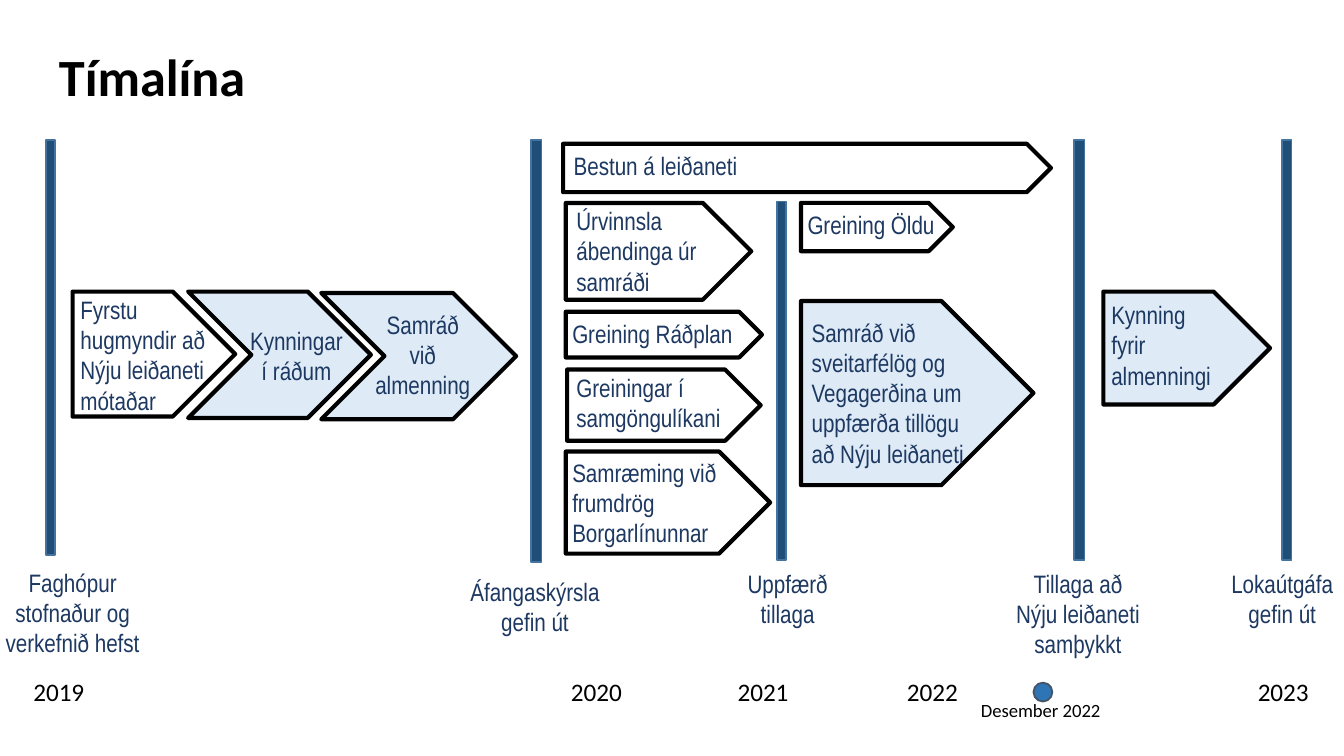
from pptx import Presentation
from pptx.dml.color import RGBColor
from pptx.enum.shapes import MSO_SHAPE as Shape
from pptx.enum.text import PP_ALIGN as Align
from pptx.util import Inches, Pt

NAVY, PALE, BLACK = "1D3861", "DEEBF7", "000000"
PLATE, CHEVRON = Shape.PENTAGON, Shape.CHEVRON
LEFT, MID = Align.LEFT, Align.CENTER
BAR_TOP = 1.04

STAGES = [
    (CHEVRON, (2.39, 2.18, 1.45, 0.94), PALE, "Samráð við almenning", (0.28, 0.07, 0.95, 0.78), MID),
    (CHEVRON, (1.4, 2.17, 1.36, 0.94), PALE, "Kynningar í ráðum", (0.33, 0.2, 0.95, 0.56), MID),
    (PLATE, (0.54, 2.17, 1.21, 0.93), None, "Fyrstu hugmyndir að Nýju leiðaneti mótaðar", (-0.04, -0.03, 1.28, 1.01), LEFT),
    (PLATE, (4.19, 1.07, 3.63, 0.36), None, "Bestun á leiðaneti", (-0.02, 0, 2.14, 0.33), LEFT),
    (PLATE, (4.21, 1.51, 1.38, 0.72), None, "Úrvinnsla ábendinga úr samráði", (-0.02, -0.03, 1.19, 0.78), LEFT),
    (PLATE, (4.21, 2.32, 1.46, 0.34), None, "Greining Ráðplan", (-0.05, 0, 1.44, 0.33), LEFT),
    (PLATE, (4.22, 2.75, 1.44, 0.53), None, "Greiningar í samgöngulíkani", (-0.03, -0.03, 1.64, 0.56), LEFT),
    (PLATE, (4.21, 3.36, 1.52, 0.76), None, "Samræming við frumdrög Borgarlínunnar", (-0.05, -0.01, 1.34, 0.78), LEFT),
    (PLATE, (5.96, 1.51, 1.13, 0.36), None, "Greining Öldu", (-0.05, 0, 1.18, 0.33), LEFT),
    (PLATE, (5.96, 2.24, 1.73, 1.37), PALE, "Samráð við sveitarfélög og Vegagerðina um uppfærða tillögu að Nýju leiðaneti", (-0.02, 0.07, 1.49, 1.24), LEFT),
    (PLATE, (8.21, 2.17, 1.24, 0.84), PALE, "Kynning fyrir almenningi", (-0.04, 0.01, 0.99, 0.78), LEFT),
]

MARKS = [
    ((0.34, BAR_TOP, 0.07, 3.09), "Faghópur stofnaður og verkefnið hefst", (-0.44, 3.13, 1.28, 0.78)),
    ((3.95, BAR_TOP, 0.08, 3.14), "Áfangaskýrsla gefin út", (-0.56, 3.2, 1.18, 0.56)),
    ((5.78, 1.5, 0.07, 2.67), "Uppfærð tillaga", (-0.51, 2.68, 1.18, 0.56)),
    ((7.99, BAR_TOP, 0.08, 3.13), "Tillaga að Nýju leiðaneti samþykkt", (-0.56, 3.14, 1.18, 0.78)),
    ((9.54, BAR_TOP, 0.07, 3.13), "Lokaútgáfa gefin út", (-0.54, 3.14, 1.08, 0.56)),
]

YEARS = [("2019", 0.09), ("2020", 4.09), ("2021", 5.33), ("2022", 6.59), ("2023", 9.2)]


def color(code):
    """Turn a hex string into a colour."""
    return RGBColor.from_string(code)


def shift(box, part):
    """Place a part relative to the corner of a box."""
    return box[0] + part[0], box[1] + part[1], part[2], part[3]


def add_shape(slide, kind, box, fill, line, width):
    """Draw an outlined shape, hollow when it has no fill."""
    shape = slide.shapes.add_shape(kind, *map(Inches, box))
    shape.shadow.inherit = False
    if fill:
        shape.fill.solid()
        shape.fill.fore_color.rgb = color(fill)
    else:
        shape.fill.background()
    shape.line.color.rgb = color(line)
    shape.line.width = Pt(width)


def add_text(slide, box, text, size=13.5, face="Arial Narrow", tint=NAVY, align=LEFT, bold=False):
    """Write one wrapped paragraph."""
    frame = slide.shapes.add_textbox(*map(Inches, box)).text_frame
    frame.word_wrap = True
    frame.text = text
    para = frame.paragraphs[0]
    para.alignment = align
    for run in para.runs:
        font = run.font
        font.size, font.name, font.bold = Pt(size), face, bold
        font.color.rgb = color(tint)


def add_stage(slide, kind, box, fill, text, part, align):
    """Draw one work stage as an arrow with its text."""
    add_shape(slide, kind, box, fill, BLACK, 2.25)
    add_text(slide, shift(box, part), text, align=align)


def add_mark(slide, box, text, part):
    """Draw one milestone bar with the label below it."""
    add_shape(slide, Shape.RECTANGLE, box, "1F4E79", "43739E", 1)
    add_text(slide, shift(box, part), text, align=MID)


def add_years(slide, box):
    """Write the year axis with the dated dot."""
    for year, left in YEARS:
        add_text(slide, shift(box, (left, 0, 0.65, box[3])), year, face="Calibri", tint=BLACK)
    add_shape(slide, Shape.OVAL, shift(box, (7.63, 0.1, 0.14, 0.14)), "2E75B6", "44546A", 1)
    add_text(slide, shift(box, (7.14, 0.17, 1.35, 0.27)), "Desember 2022", 10, "Calibri", BLACK)


def main():
    """Build the timeline slide."""
    deck = Presentation()
    deck.slide_width = Inches(10)
    deck.slide_height = deck.slide_width * 9 // 16
    slide = deck.slides.add_slide(deck.slide_layouts[6])
    add_text(slide, (0.34, 0.28, 5.95, 0.8), "Tímalína", 28, "Calibri", BLACK, bold=True)
    for stage in STAGES:
        add_stage(slide, *stage)
    for mark in MARKS:
        add_mark(slide, *mark)
    add_years(slide, (0.06, 4.98, 10.08, 0.33))
    deck.save("out.pptx")


if __name__ == "__main__":
    main()
